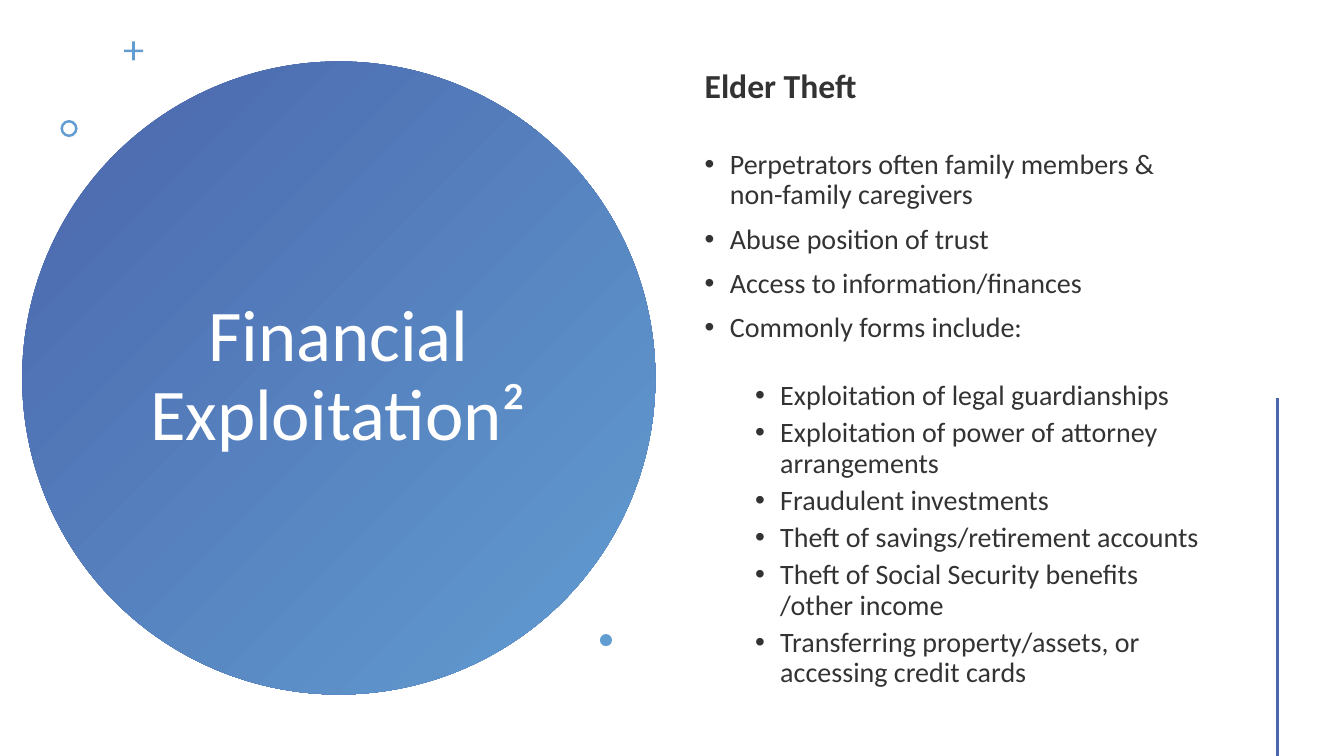
import pptx
import pptx.util
import pptx.dml.color
import pptx.enum.shapes
import pptx.enum.text
import pptx.oxml
import pptx.oxml.ns
from lxml import etree

Inches, Pt = pptx.util.Inches, pptx.util.Pt
SHAPE = pptx.enum.shapes.MSO_SHAPE
ALIGN = pptx.enum.text.PP_ALIGN
qn = pptx.oxml.ns.qn

COLORS = {"navy": "4A66AC", "sky": "629DD1", "text": "333333", "white": "FFFFFF"}


def rgb(name):
    return pptx.dml.color.RGBColor.from_string(COLORS[name])


class SlideBuilder:
    font = "Calibri"

    def __init__(self, prs):
        self.s = prs.slides.add_slide(prs.slide_layouts[6])

    def shape(self, kind, x, y, size, color="sky", adj=None):
        sp = self.s.shapes.add_shape(kind, Inches(x), Inches(y), Inches(size), Inches(size))
        sp.shadow.inherit = False
        sp.line.fill.background()
        sp.fill.solid()
        sp.fill.fore_color.rgb = rgb(color)
        if adj is not None:
            sp.adjustments[0] = adj
        return sp

    def gradient_circle(self, x, y, size, start, end):
        sp = self.shape(SHAPE.OVAL, x, y, size)
        sp.fill.gradient()
        sp.fill.gradient_angle = 315
        for stop, color in zip(sp.fill.gradient_stops, (start, end)):
            stop.color.rgb = rgb(color)

    def text_box(self, x, y, w, h):
        tf = self.s.shapes.add_textbox(Inches(x), Inches(y), Inches(w), Inches(h)).text_frame
        tf.word_wrap = True
        tf.vertical_anchor = pptx.enum.text.MSO_ANCHOR.MIDDLE
        return tf

    def paragraph(self, tf, text, size, color="text", bold=False, align=ALIGN.LEFT,
                  before=0, after=0, indent=None, level=0):
        p = tf.paragraphs[0] if not tf.text else tf.add_paragraph()
        p.font.name, p.font.size, p.font.bold = self.font, Pt(size), bold
        p.font.color.rgb = rgb(color)
        p.alignment, p.line_spacing, p.level = align, 0.9, level
        p.space_before, p.space_after = Pt(before), Pt(after)
        p.add_run().text = text
        if indent is not None:
            self.bullet(p, indent)

    def bullet(self, p, indent):
        pPr = p._p.get_or_add_pPr()
        pPr.set("marL", str(Inches(indent)))
        pPr.set("indent", str(Inches(-0.25)))
        font = etree.Element(qn("a:buFont"), typeface="Arial")
        char = etree.Element(qn("a:buChar"), char="•")
        defaults = pPr.find(qn("a:defRPr"))
        defaults.addprevious(font)
        defaults.addprevious(char)

    def line(self, x1, y1, x2, y2, color, width):
        c = self.s.shapes.add_connector(pptx.enum.shapes.MSO_CONNECTOR.STRAIGHT,
                                        Inches(x1), Inches(y1), Inches(x2), Inches(y2))
        c.line.color.rgb = rgb(color)
        c.line.width = Pt(width)
        etree.SubElement(c._element.spPr, qn("a:effectLst"))


def main():
    prs = pptx.Presentation()
    prs.slide_width, prs.slide_height = Inches(13.33), Inches(7.5)
    slide = SlideBuilder(prs)

    # Title circle
    slide.gradient_circle(0.22, 0.61, 6.28, "navy", "sky")
    title = slide.text_box(1.36, 1.41, 3.99, 4.67)
    slide.paragraph(title, "Financial Exploitation²", 52, "white", align=ALIGN.CENTER)

    # Small ornaments
    slide.shape(SHAPE.CROSS, 1.23, 0.41, 0.19, adj=0.43)
    slide.shape(SHAPE.DONUT, 0.6, 1.19, 0.17, adj=0.15)
    slide.shape(SHAPE.OVAL, 5.95, 6.29, 0.12)

    # Body text
    body = slide.text_box(6.89, 0.57, 5.22, 6.38)
    slide.paragraph(body, "Elder Theft", 24, bold=True, before=10, after=22)
    points = ["Perpetrators often family members & non-family caregivers",
              "Abuse position of trust",
              "Access to information/finances",
              "Commonly forms include:"]
    for text in points:
        gap = 22 if text == points[-1] else 0
        slide.paragraph(body, text, 20, before=10, after=gap, indent=0.25)
    for text in ["Exploitation of legal guardianships",
                 "Exploitation of power of attorney arrangements",
                 "Fraudulent investments",
                 "Theft of savings/retirement accounts",
                 "Theft of Social Security benefits /other income",
                 "Transferring property/assets, or accessing credit cards"]:
        slide.paragraph(body, text, 20, before=5, indent=0.75, level=1)

    # Accent line
    slide.line(12.67, 3.95, 12.67, 7.5, "navy", 2)

    prs.save("out.pptx")


if __name__ == "__main__":
    main()
